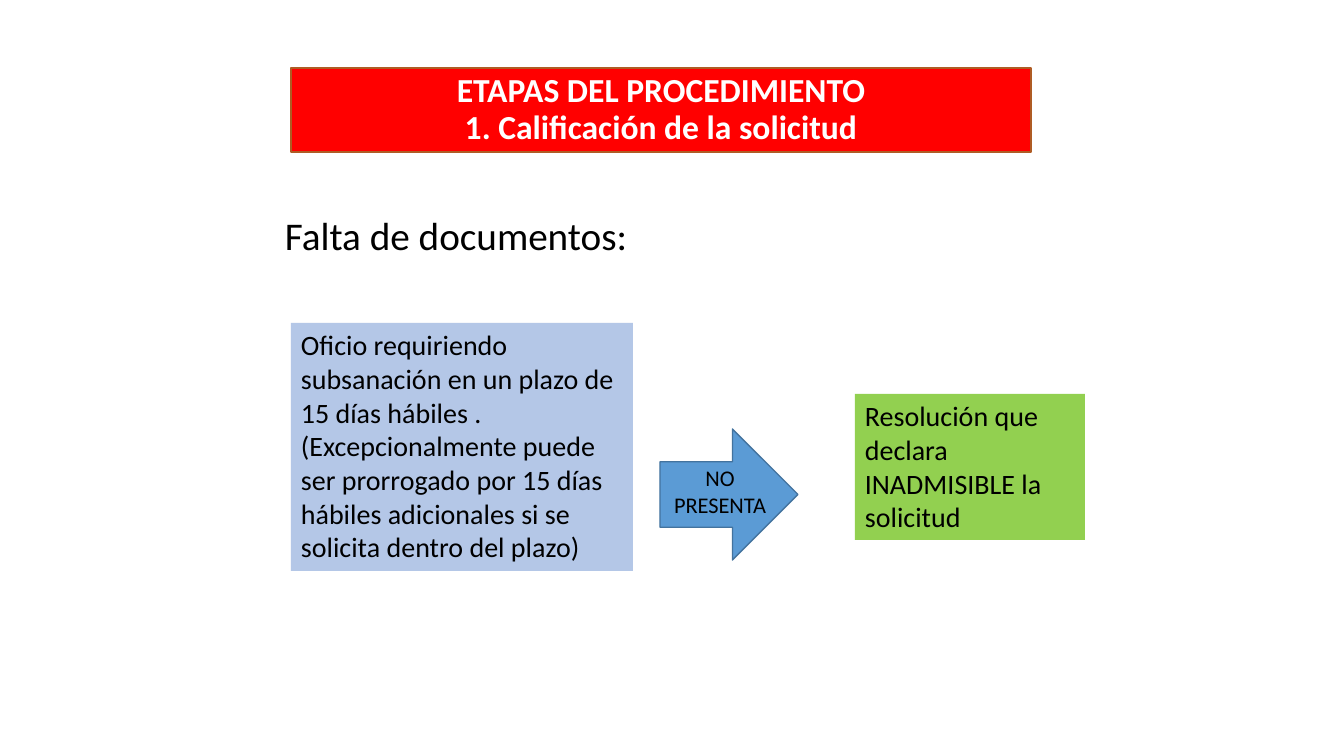
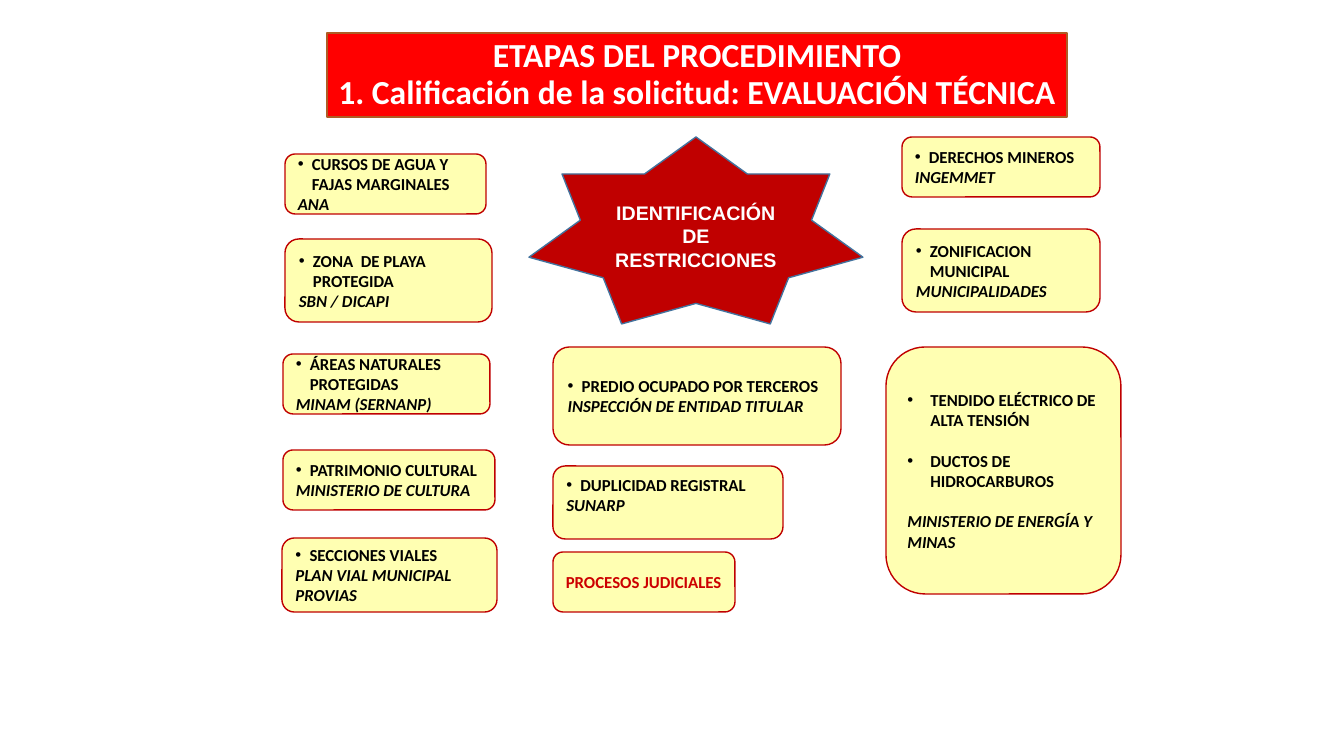
from pptx import Presentation
from pptx.dml.color import RGBColor
from pptx.enum.shapes import MSO_SHAPE
from pptx.enum.text import MSO_ANCHOR, PP_ALIGN
from pptx.oxml.ns import qn
from pptx.util import Pt
from lxml.etree import SubElement

PX = 914400 / 100.8
WIDE, HIGH = 1344, 756
FONT = "Calibri"
HEX = {"red": "FF0000", "rust": "AF5C24", "pale": "B4C7E7", "green": "92D050",
       "blue": "5B9BD5", "navy": "43739E", "yellow": "FFFF00", "wine": "C00000",
       "alert": "CC0000", "black": "000000", "white": "FFFFFF"}

# Content: boxes are (left, top, width, height) in px
HEAD = "ETAPAS DEL PROCEDIMIENTO"
STEP = "1. Calificación de la solicitud"
TITLES = [((291, 68, 740, 84), STEP),
          ((327, 33, 740, 84), STEP + ": EVALUACIÓN TÉCNICA")]
LEAD = ((275, 212, 826, 53), "Falta de documentos:")
NOTES = [
    ((291, 323, 342, 248), "pale",
     ["Oficio requiriendo subsanación en un plazo de 15 días hábiles .",
      "(Excepcionalmente puede ser prorrogado por 15 días hábiles "
      "adicionales si se solicita dentro del plazo)"]),
    ((855, 394, 230, 146), "green",
     ["Resolución que declara", "INADMISIBLE la solicitud"]),
]
ARROW = (660, 429, 138, 131)
LABEL = ((663, 459, 114, 65), ["NO", "PRESENTA"])
STAR = ((529, 137, 334, 187), "IDENTIFICACIÓN DE RESTRICCIONES")

# Cards: box, bulleted restrictions, body in charge
CARDS = [
    ((285, 154, 201, 60), ["CURSOS DE AGUA Y FAJAS MARGINALES"], "ANA"),
    ((285, 239, 207, 83), ["ZONA  DE PLAYA\nPROTEGIDA"], "SBN / DICAPI"),
    ((283, 354, 207, 60), ["ÁREAS NATURALES PROTEGIDAS"], "MINAM (SERNANP)"),
    ((283, 450, 212, 60), ["PATRIMONIO CULTURAL"], "MINISTERIO DE CULTURA"),
    ((282, 538, 215, 74), ["SECCIONES VIALES"], "PLAN VIAL MUNICIPAL PROVIAS"),
    ((553, 347, 288, 98), ["PREDIO OCUPADO POR TERCEROS"],
     "INSPECCIÓN DE ENTIDAD TITULAR"),
    ((902, 137, 198, 60), ["DERECHOS MINEROS"], "INGEMMET"),
    ((902, 229, 198, 83), ["ZONIFICACION MUNICIPAL"], "MUNICIPALIDADES"),
]
TOP = ((553, 466, 230, 73), ["DUPLICIDAD REGISTRAL"], "SUNARP")
TALL = ((886, 347, 235, 247),
        ["TENDIDO ELÉCTRICO DE ALTA TENSIÓN", "DUCTOS DE HIDROCARBUROS"],
        "MINISTERIO DE ENERGÍA Y MINAS")
COURT = ((553, 552, 182, 60), "PROCESOS JUDICIALES")


def px(n):
    return round(n * PX)


def tone(name):
    return RGBColor.from_string(HEX[name])


def shape(slide, kind, at, fill, line=None, alpha=None):
    item = slide.shapes.add_shape(kind, *map(px, at))
    item.shadow.inherit = False
    item.fill.solid()
    item.fill.fore_color.rgb = tone(fill)
    if alpha:
        clr = item.fill._xPr.find(qn("a:solidFill"))[0]
        SubElement(clr, qn("a:alpha")).set("val", str(alpha * 1000))
    if line:
        item.line.color.rgb = tone(line)
        item.line.width = Pt(1)
    else:
        item.line.fill.background()
    return item


def frame(item, anchor=MSO_ANCHOR.MIDDLE, wrap=True):
    text = item.text_frame
    text.word_wrap = wrap
    text.vertical_anchor = anchor
    return text


def write(text, words, size, color="black", bold=False, italic=False,
          align=PP_ALIGN.LEFT, hang=0, gap=0, space=None, font=FONT):
    """Add one paragraph; a newline in words is a line break."""
    first = text.paragraphs[0]
    para = text.add_paragraph() if first.runs else first
    para.alignment = align
    if gap:
        para.space_before = Pt(gap)
    if space:
        para.line_spacing = space
    if hang:
        prop = para._p.get_or_add_pPr()
        prop.set("marL", str(px(hang)))
        prop.set("indent", str(-px(hang)))
        SubElement(prop, qn("a:buFont")).set("typeface", "Arial")
        SubElement(prop, qn("a:buChar")).set("char", "•")
    for n, part in enumerate(words.split("\n")):
        if n:
            para.add_line_break()
        run = para.add_run()
        run.text = part
        run.font.name, run.font.size = font, Pt(size)
        run.font.bold, run.font.italic = bold, italic
        run.font.color.rgb = tone(color)


def title(slide, at, line):
    text = frame(shape(slide, MSO_SHAPE.RECTANGLE, at, "red", "rust"))
    write(text, HEAD + "\n" + line, 24, "white", bold=True,
          align=PP_ALIGN.CENTER, space=0.9)


def panel(slide, at, anchor=MSO_ANCHOR.MIDDLE):
    return frame(shape(slide, MSO_SHAPE.ROUNDED_RECTANGLE, at,
                       "yellow", "wine", alpha=30), anchor)


def card(slide, at, items, body, hang=14, gap=0, anchor=MSO_ANCHOR.MIDDLE):
    text = panel(slide, at, anchor)
    for n, item in enumerate(items):
        write(text, item, 12, bold=True, hang=hang, gap=gap if n else 0)
    write(text, body, 12, bold=True, italic=True, gap=gap)


def label(slide, at, lines, size, wrap=True, **style):
    box = slide.shapes.add_textbox(*map(px, at))
    text = frame(box, MSO_ANCHOR.TOP, wrap)
    for line in lines:
        write(text, line, size, **style)


def missing(slide):
    label(slide, LEAD[0], [LEAD[1]], 28, space=0.9)
    for at, fill, lines in NOTES:
        text = frame(shape(slide, MSO_SHAPE.RECTANGLE, at, fill), MSO_ANCHOR.TOP)
        for line in lines:
            write(text, line, 20)
    shape(slide, MSO_SHAPE.RIGHT_ARROW, ARROW, "blue", "navy")
    label(slide, *LABEL, 16, wrap=False, align=PP_ALIGN.CENTER)


def limits(slide):
    for item in CARDS:
        card(slide, *item)
    card(slide, *TOP, anchor=MSO_ANCHOR.TOP)
    card(slide, *TALL, hang=23, gap=14.6)
    write(panel(slide, COURT[0]), COURT[1], 12, "alert", bold=True)
    # Central star, text set a little below the middle
    text = frame(shape(slide, MSO_SHAPE.STAR_7_POINT, STAR[0], "wine", "navy"))
    text.margin_top = px(25)
    write(text, STAR[1], 14, "white", bold=True,
          align=PP_ALIGN.CENTER, font="Arial")


def main():
    deck = Presentation()
    deck.slide_width, deck.slide_height = px(WIDE), px(HIGH)
    for (at, line), draw in zip(TITLES, (missing, limits)):
        slide = deck.slides.add_slide(deck.slide_layouts[6])
        title(slide, at, line)
        draw(slide)
    deck.save("out.pptx")


if __name__ == "__main__":
    main()
